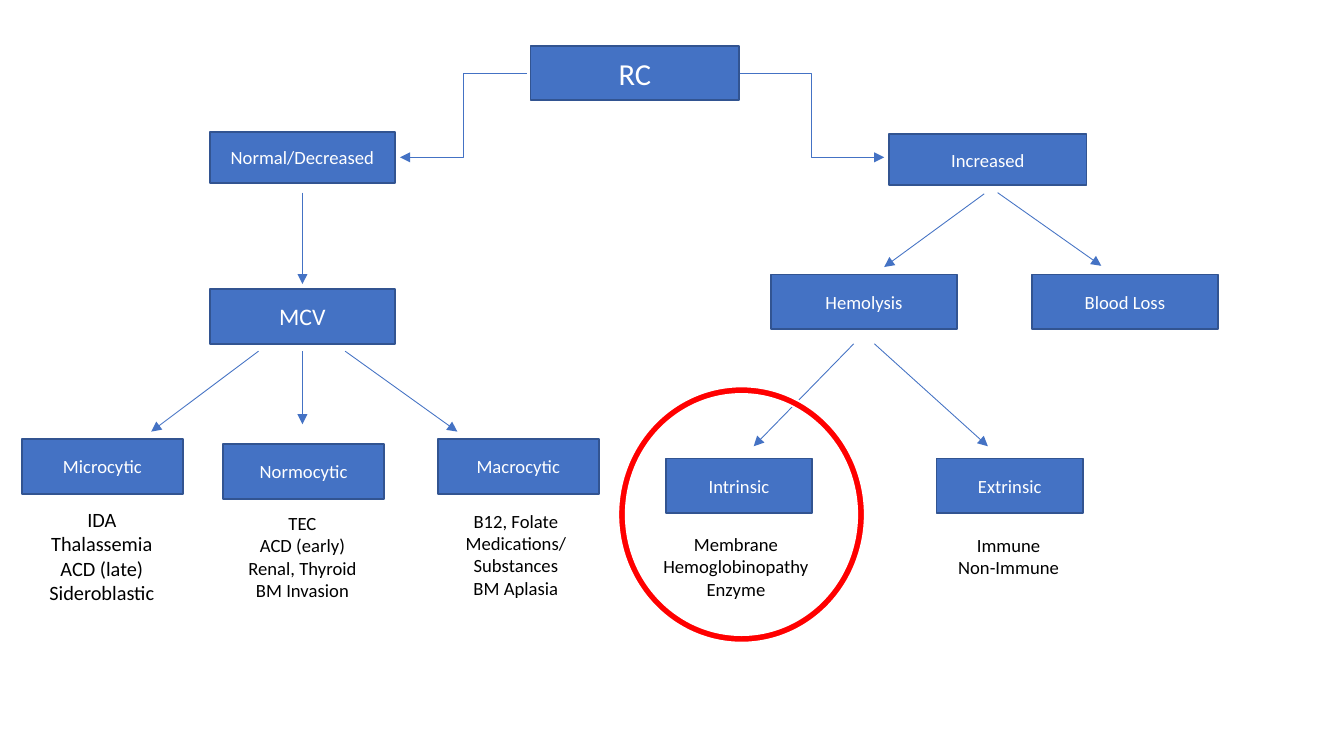
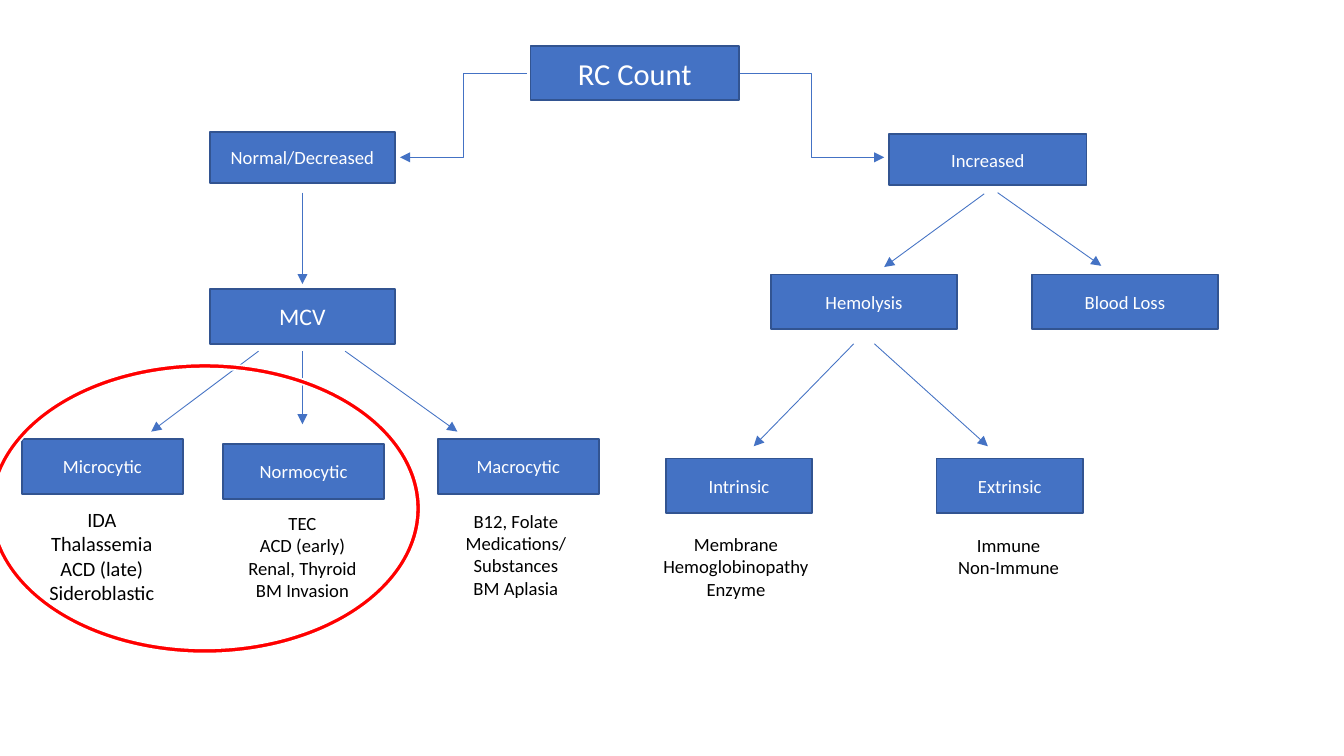
from lxml import etree
from pptx import Presentation
from pptx.dml.color import RGBColor
from pptx.enum import shapes as sh, text as tx
from pptx.oxml import ns
from pptx.util import Inches, Pt

BLUE = RGBColor(0x44, 0x72, 0xC4)
NAVY = RGBColor(0x32, 0x54, 0x91)
RED = RGBColor(0xFF, 0x00, 0x00)
WHITE = RGBColor(0xFF, 0xFF, 0xFF)
BLACK = RGBColor(0x00, 0x00, 0x00)
FONT = "Calibri"

# Grid: square cells, 110.2 columns by 62 rows
CELL = Inches(0.1)
COLS, ROWS = 110.2, 62

# Boxes: text, size, left, top, width, height
BOXES = [
    ("Normal/Decreased", 11, 17.2, 10.8, 15.2, 4.2),
    ("Increased", 11, 72.9, 11, 16.2, 4.2),
    ("MCV", 14, 17.2, 23.7, 15.2, 4.5),
    ("Hemolysis", 11, 63.2, 22.5, 15.3, 4.5),
    ("Blood Loss", 11, 84.6, 22.5, 15.3, 4.5),
    ("Microcytic", 11, 1.8, 36, 13.2, 4.5),
    ("Normocytic", 11, 18.3, 36.4, 13.2, 4.5),
    ("Macrocytic", 11, 35.9, 36, 13.2, 4.5),
    ("Intrinsic", 11, 54.6, 37.6, 12, 4.5),
    ("Extrinsic", 11, 76.8, 37.6, 12, 4.5),
]

# Causes under the last row: text, size, left, top, width, height
CAUSES = [
    ("IDA\nThalassemia\nACD (late)\nSideroblastic", 12, 0.6, 41.1, 15.5, 9.1),
    ("TEC\nACD (early)\nRenal, Thyroid\nBM Invasion", 11, 17.7, 41.5, 14.2, 8.4),
    ("B12, Folate\nMedications/ Substances\nBM Aplasia", 11, 35.2, 41.3, 14.2, 8.4),
    ("Membrane\nHemoglobinopathy\nEnzyme", 11, 51.8, 43.2, 17.1, 6.6),
    ("Immune\nNon-Immune", 11, 75.6, 43.3, 14.2, 4.7),
]

# Arrows: kind, start column and row, end column and row
BENT, LINE = sh.MSO_CONNECTOR.ELBOW, sh.MSO_CONNECTOR.STRAIGHT
ARROWS = [
    (BENT, 43.2, 6, 32.8, 12.9),
    (BENT, 60.6, 6, 72.5, 12.9),
    (LINE, 24.8, 15.8, 24.8, 23.3),
    (LINE, 80.7, 15.9, 72.5, 21.9),
    (LINE, 81.8, 15.8, 90.3, 21.8),
    (LINE, 21.2, 28.8, 12.4, 35.4),
    (LINE, 24.8, 28.8, 24.8, 34.8),
    (LINE, 28.3, 28.8, 37.5, 35.4),
    (LINE, 70, 28.2, 61.8, 36.6),
    (LINE, 71.7, 28.2, 81, 36.6),
]

# Slides: root text, ring place, ring thickness
SLIDES = [
    ("RC", (50.7, 31.7, 20.2, 21), 0.03),
    ("RC Count", (-0.9, 29.8, 35.4, 23.8), 0.018),
]


def grid(*cells):
    return [round(c * CELL) for c in cells]


def write(frame, words, size, color):
    frame.text = words
    frame.word_wrap = True
    for para in frame.paragraphs:
        para.alignment = tx.PP_ALIGN.CENTER
        for run in para.runs:
            run.font.name = FONT
            run.font.size = Pt(size)
            run.font.color.rgb = color


deck = Presentation()
deck.slide_width, deck.slide_height = grid(COLS, ROWS)

for root, place, thick in SLIDES:
    slide = deck.slides.add_slide(deck.slide_layouts[6])
    parts = slide.shapes

    # Arrows
    for kind, *ends in ARROWS:
        arrow = parts.add_connector(kind, *grid(*ends))
        arrow.line.color.rgb = BLUE
        arrow.line.width = Pt(0.5)
        tip = etree.SubElement(arrow.line._get_or_add_ln(), ns.qn("a:tailEnd"))
        tip.set("type", "triangle")
        etree.SubElement(arrow._element.spPr, ns.qn("a:effectLst"))

    # Boxes, with the root first
    for words, size, *spot in [(root, 18, 43.5, 3.8, 17.1, 4.4)] + BOXES:
        box = parts.add_shape(sh.MSO_SHAPE.RECTANGLE, *grid(*spot))
        box.shadow.inherit = False
        box.fill.solid()
        box.fill.fore_color.rgb = BLUE
        box.line.color.rgb = NAVY
        box.line.width = Pt(1)
        box.text_frame.vertical_anchor = tx.MSO_ANCHOR.MIDDLE
        write(box.text_frame, words, size, WHITE)

    # Causes
    for words, size, *spot in CAUSES:
        note = parts.add_textbox(*grid(*spot))
        write(note.text_frame, words, size, BLACK)
        note.text_frame.auto_size = tx.MSO_AUTO_SIZE.SHAPE_TO_FIT_TEXT

    # Red ring around the branch in focus
    ring = parts.add_shape(sh.MSO_SHAPE.DONUT, *grid(*place))
    ring.adjustments[0] = thick
    ring.shadow.inherit = False
    ring.fill.solid()
    ring.fill.fore_color.rgb = RED
    ring.line.color.rgb = WHITE
    ring.line.width = Pt(1)

deck.save("out.pptx")
